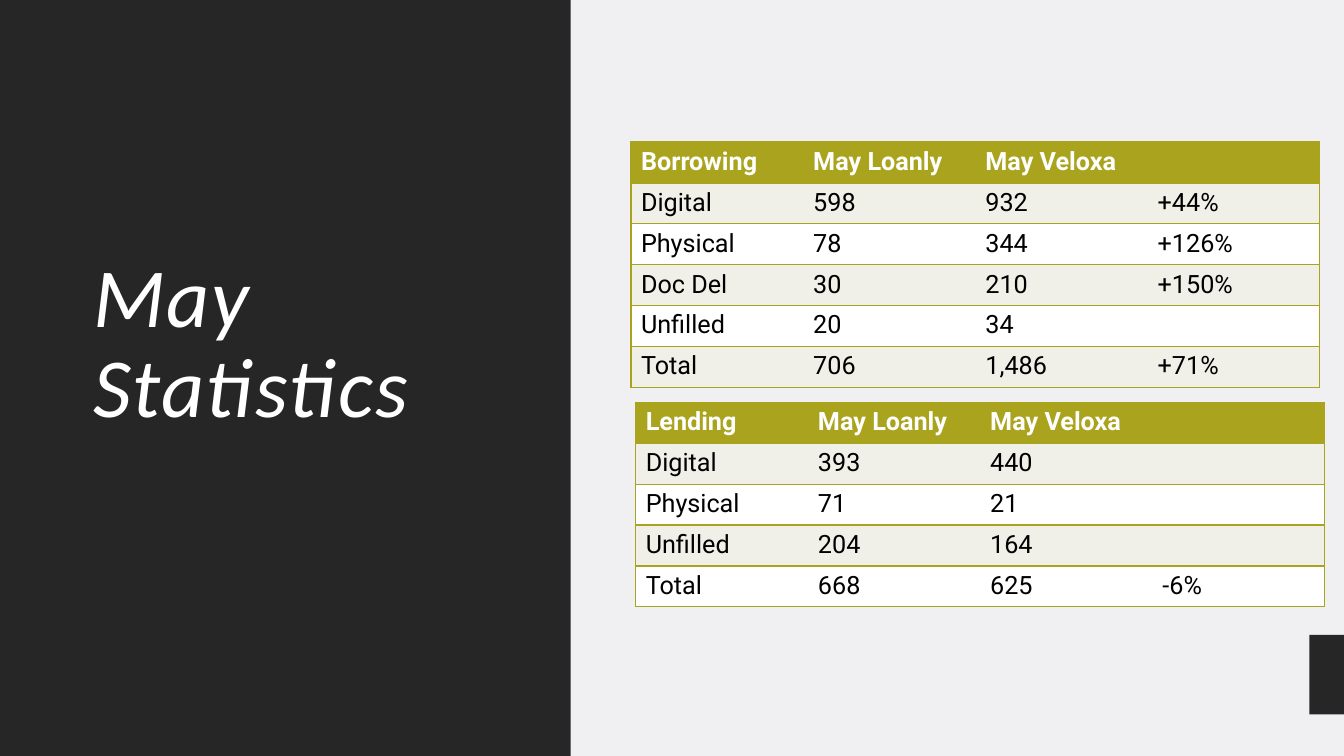
from lxml.etree import SubElement
from pptx import Presentation
from pptx.dml.color import RGBColor
from pptx.enum.shapes import MSO_SHAPE
from pptx.enum.text import MSO_ANCHOR, MSO_AUTO_SIZE, PP_ALIGN
from pptx.oxml.ns import qn
from pptx.util import Cm, Pt
from math import cos, pi, sin

COLORS = {
    "paper": "F0F0F3",
    "dark": "262626",
    "olive": "AAA31E",
    "band": "F1F0E8",
    "white": "FFFFFF",
    "black": "000000",
}
WIDTH, HEIGHT = 33.87, 19.05
COLUMN_WIDTH, ROW_HEIGHT = 4.34, 1.03

BORROWING = [
    ("Borrowing", "May Loanly", "May Veloxa", ""),
    ("Digital", "598", "932", "+44%"),
    ("Physical", "78", "344", "+126%"),
    ("Doc Del", "30", "210", "+150%"),
    ("Unfilled", "20", "34", ""),
    ("Total", "706", "1,486", "+71%"),
]
LENDING = [
    ("Lending", "May Loanly", "May Veloxa", ""),
    ("Digital", "393", "440", ""),
    ("Physical", "71", "21", ""),
    ("Unfilled", "204", "164", ""),
    ("Total", "668", "625", "-6%"),
]


def paint(fill, color):
    fill.solid()
    fill.fore_color.rgb = RGBColor.from_string(COLORS[color])


def write(frame, text, *, font="Roboto", size=18, color="black", bold=False,
          italic=False, line_spacing=None, tracking=None):
    """Fill the frame's first paragraph; tracking is in hundredths of a point."""
    paragraph = frame.paragraphs[0]
    paragraph.alignment = PP_ALIGN.LEFT
    paragraph.line_spacing = line_spacing
    run = paragraph.add_run()
    run.text = text
    run.font.name, run.font.size = font, Pt(size)
    run.font.bold, run.font.italic = bold, italic
    run.font.color.rgb = RGBColor.from_string(COLORS[color])
    if tracking is not None:
        run.font._element.set("spc", str(tracking))


def set_borders(cell, visible_sides):
    """Rule the given sides (of L, R, T, B) in olive and clear the others."""
    properties = cell._tc.get_or_add_tcPr()
    for side in "LRTB":
        line = SubElement(properties, qn(f"a:ln{side}"), w=str(Pt(1)))
        if side in visible_sides:
            solid = SubElement(line, qn("a:solidFill"))
            SubElement(solid, qn("a:srgbClr"), val=COLORS["olive"])
        else:
            SubElement(line, qn("a:noFill"))


class StatisticsSlide:
    def __init__(self, presentation):
        self.slide = presentation.slides.add_slide(presentation.slide_layouts[5])
        self.shapes = self.slide.shapes
        paint(self.slide.background.fill, "paper")

    def finish(self, shape, color):
        paint(shape.fill, color)
        shape.line.fill.background()
        shape.shadow.inherit = False

    def panel(self, width, color):
        self.finish(self.shapes.add_shape(
            MSO_SHAPE.RECTANGLE, 0, 0, Cm(width), Cm(HEIGHT)), color)

    def title(self, text, left, top, width, height):
        title = self.shapes.title
        title.left, title.top = Cm(left), Cm(top)
        title.width, title.height = Cm(width), Cm(height)
        # Bring the title in front of the panels
        self.shapes._spTree.append(title._element)
        frame = title.text_frame
        frame.word_wrap = True
        frame.auto_size = MSO_AUTO_SIZE.NONE
        frame.vertical_anchor = MSO_ANCHOR.MIDDLE
        write(frame, text, font="Calibri", size=60, color="white", italic=True,
              line_spacing=0.9, tracking=100)

    def half_disc(self, center_x, center_y, radius, color, steps=48):
        """Draw the left half of a disc as a polygon."""
        angles = [pi * step / steps for step in range(steps + 1)]
        points = [(center_x - radius * sin(angle), center_y - radius * cos(angle))
                  for angle in angles]
        outline = self.shapes.build_freeform(*points[0], scale=Cm(1))
        outline.add_line_segments(points[1:], close=True)
        self.finish(outline.convert_to_shape(), color)

    def table(self, rows, left, top):
        columns = len(rows[0])
        table = self.shapes.add_table(
            len(rows), columns, Cm(left), Cm(top),
            Cm(COLUMN_WIDTH * columns), Cm(ROW_HEIGHT * len(rows))).table
        table.first_row = table.horz_banding = False
        for column in table.columns:
            column.width = Cm(COLUMN_WIDTH)
        for row_index, values in enumerate(rows):
            table.rows[row_index].height = Cm(ROW_HEIGHT)
            header = row_index == 0
            fill = "olive" if header else ("white", "band")[row_index % 2]
            for column_index, value in enumerate(values):
                cell = table.cell(row_index, column_index)
                sides = "TB"
                if column_index == 0:
                    sides += "L"
                if column_index == columns - 1:
                    sides += "R"
                set_borders(cell, sides)
                paint(cell.fill, fill)
                if value:
                    write(cell.text_frame, value, bold=header,
                          color="white" if header else "black")


def main():
    presentation = Presentation()
    presentation.slide_width, presentation.slide_height = Cm(WIDTH), Cm(HEIGHT)
    statistics = StatisticsSlide(presentation)
    statistics.panel(WIDTH, "paper")
    statistics.panel(14.38, "dark")
    statistics.title("May Statistics", 2.1, 2.1, 10.65, 13.2)
    statistics.half_disc(WIDTH, 17.2, 1.14, "dark")
    statistics.table(BORROWING, 15.9, 3.58)
    statistics.table(LENDING, 16.02, 10.14)
    presentation.save("out.pptx")


if __name__ == "__main__":
    main()
